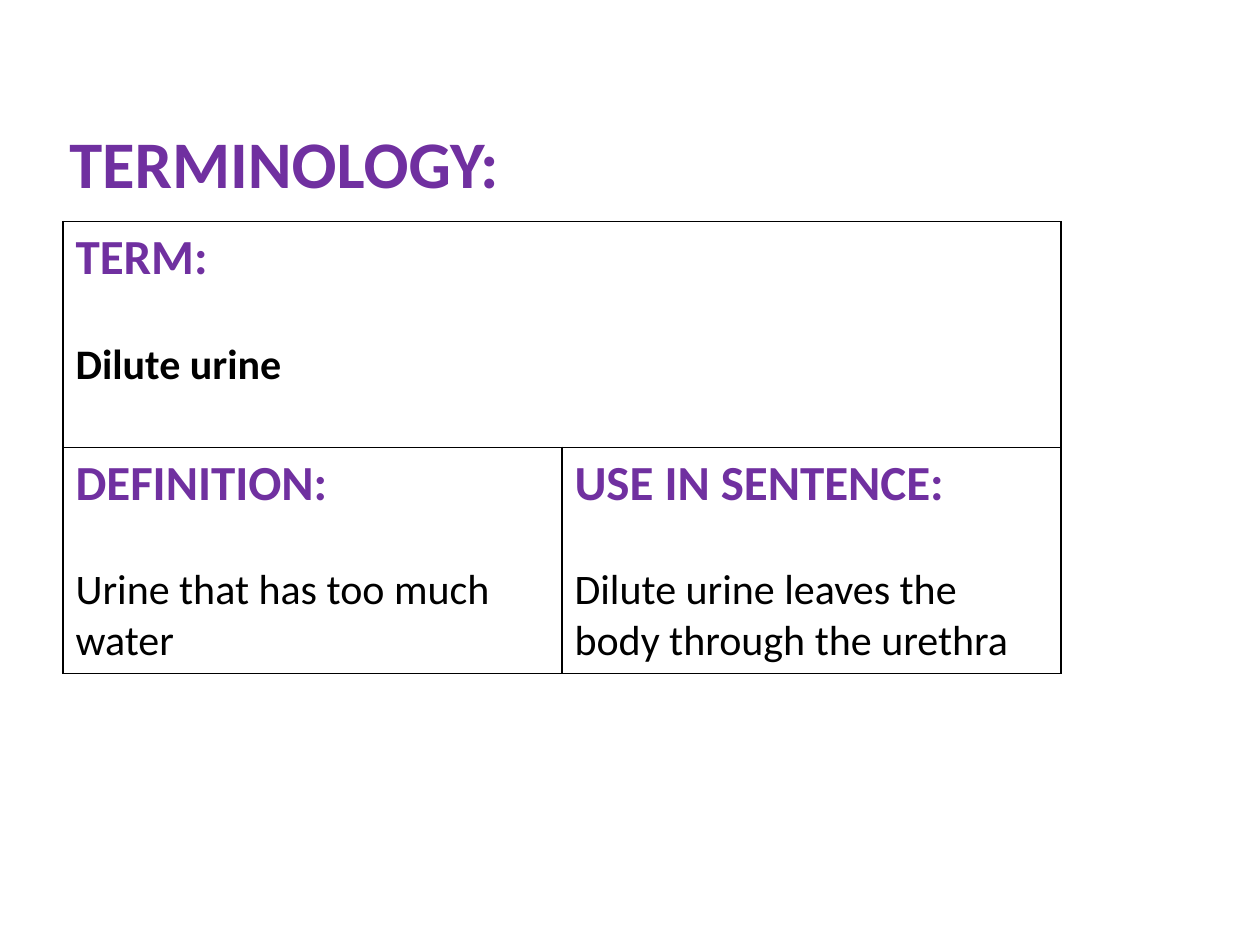
from pptx import Presentation
from pptx.dml.color import RGBColor
from pptx.enum.text import MSO_ANCHOR, MSO_AUTO_SIZE, PP_ALIGN
from pptx.oxml import parse_xml
from pptx.oxml.ns import nsdecls
from pptx.util import Inches, Pt

BOTTOM, LEFT, FIXED = MSO_ANCHOR.BOTTOM, PP_ALIGN.LEFT, MSO_AUTO_SIZE.NONE
FONT = "Calibri"
COLORS = {"head": "7030A0", "text": "000000", "rule": "000000"}
TITLE_ONLY = 5
GAP = 29.3  # one 24 pt line


def add_run(para, text, size, color, bold):
    run = para.add_run()
    run.text = text
    font = run.font
    font.name, font.size, font.bold = FONT, Pt(size), bold
    font.color.rgb = RGBColor.from_string(COLORS[color])


def add_title(slide, box, text):
    title = slide.shapes.title
    title.left, title.top, title.width, title.height = box
    frame = title.text_frame
    frame.auto_size, frame.word_wrap = FIXED, True
    frame.vertical_anchor = BOTTOM
    frame.margin_left = frame.margin_right = Inches(0.05)
    frame.margin_top = frame.margin_bottom = 0
    para = frame.paragraphs[0]
    para.alignment = LEFT
    add_run(para, text, 38, "head", True)


def style_cell(cell):
    """Rule all four sides and clear the fill."""
    props = cell._tc.get_or_add_tcPr()
    for side in "LRTB":
        props.append(parse_xml(
            f'<a:ln{side} {nsdecls("a")} w="{Pt(1)}"><a:solidFill>'
            f'<a:srgbClr val="{COLORS["rule"]}"/></a:solidFill></a:ln{side}>'))
    cell.fill.background()


def fill_cell(cell, head, body, bold=False):
    frame = cell.text_frame
    add_run(frame.paragraphs[0], head, 28, "head", True)
    para = frame.add_paragraph()
    para.space_before = Pt(GAP)
    add_run(para, body, 24, "text", bold)


def add_terms(slide, box, term, meaning, usage):
    table = slide.shapes.add_table(2, 2, *box).table
    table.first_row = table.horz_banding = False
    for cell in table.iter_cells():
        style_cell(cell)
    table.cell(0, 0).merge(table.cell(0, 1))
    fill_cell(table.cell(0, 0), "TERM:", term, True)
    fill_cell(table.cell(1, 0), "DEFINITION:", meaning)
    fill_cell(table.cell(1, 1), "USE IN SENTENCE:", usage)


def main():
    deck = Presentation()
    deck.slide_width, deck.slide_height = Inches(10), Inches(7.5)
    slide = deck.slides.add_slide(deck.slide_layouts[TITLE_ONLY])
    left, width = Inches(0.5), Inches(7.92)
    add_title(slide, (left, Inches(0.35), width, Inches(1.25)), "TERMINOLOGY:")
    add_terms(slide, (left, Inches(1.76), width, Inches(3.58)),
              "Dilute urine", "Urine that has too much water",
              "Dilute urine leaves the body through the urethra")
    deck.save("out.pptx")


if __name__ == "__main__":
    main()
